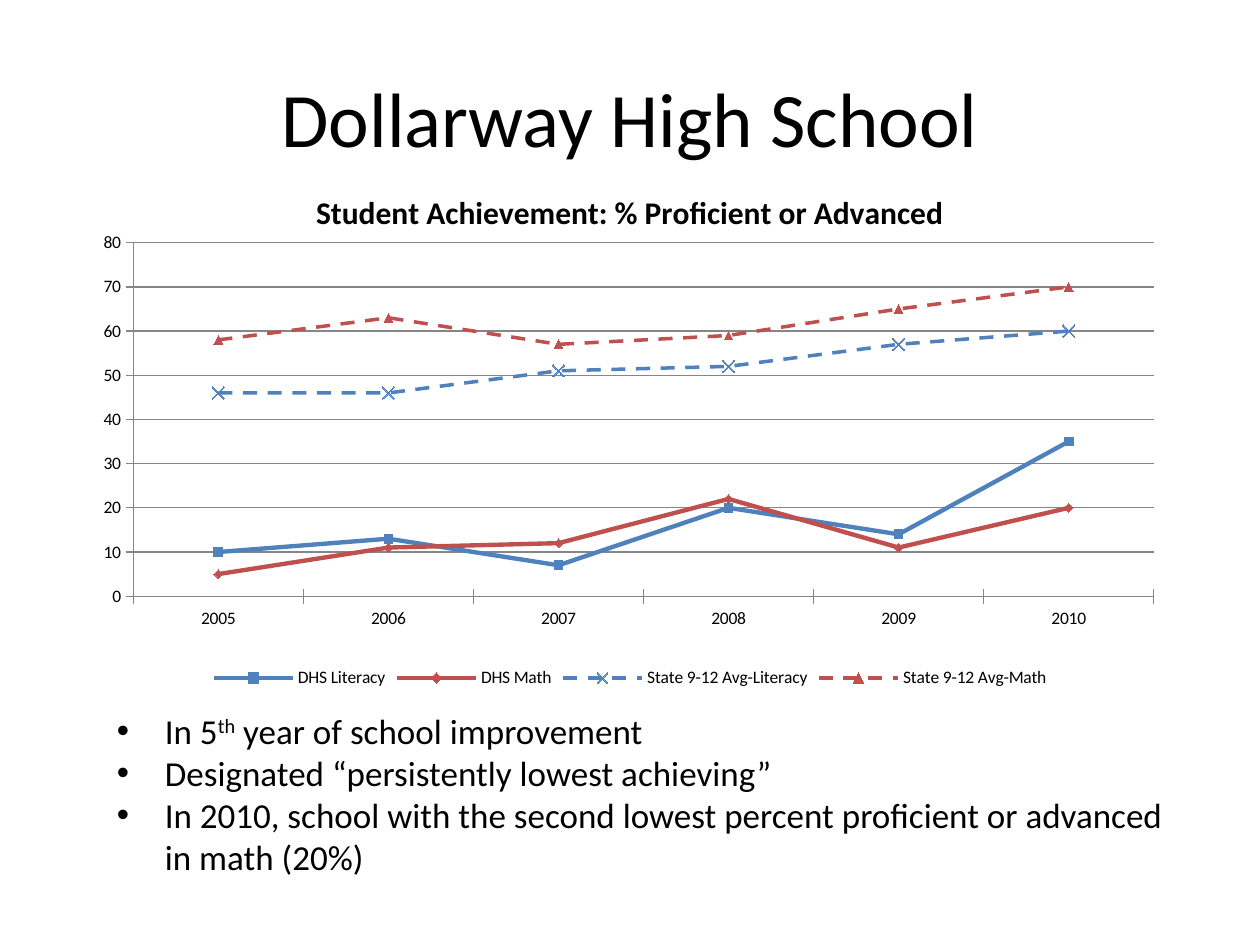
from lxml import etree
from pptx import Presentation
from pptx.chart.data import CategoryChartData
from pptx.dml.color import RGBColor
from pptx.enum.chart import XL_CHART_TYPE, XL_LEGEND_POSITION, XL_MARKER_STYLE, XL_TICK_MARK
from pptx.enum.dml import MSO_LINE
from pptx.enum.text import MSO_ANCHOR, PP_ALIGN
from pptx.oxml import parse_xml
from pptx.oxml.ns import nsdecls, qn
from pptx.util import Inches, Pt

BLACK = RGBColor(0x00, 0x00, 0x00)
GRAY = RGBColor(0x86, 0x86, 0x86)
BLUE = RGBColor(0x4F, 0x81, 0xBD)
RED = RGBColor(0xC0, 0x50, 0x4D)
SOLID, DASH = MSO_LINE.SOLID, MSO_LINE.DASH
SQUARE, DIAMOND = XL_MARKER_STYLE.SQUARE, XL_MARKER_STYLE.DIAMOND
CROSS_MARK, TRIANGLE = XL_MARKER_STYLE.X, XL_MARKER_STYLE.TRIANGLE
TICK_CROSS = XL_TICK_MARK.CROSS

YEARS = ["2005", "2006", "2007", "2008", "2009", "2010"]
# name, values, color, dash, line width, marker style, marker size
SERIES = [
    ("DHS Literacy", (10, 13, 7, 20, 14, 35), BLUE, SOLID, 2.5, SQUARE, 5),
    ("DHS Math", (5, 11, 12, 22, 11, 20), RED, SOLID, 2.5, DIAMOND, 5),
    ("State 9-12 Avg-Literacy", (46, 46, 51, 52, 57, 60), BLUE, DASH, 2, CROSS_MARK, 7),
    ("State 9-12 Avg-Math", (58, 63, 57, 59, 65, 70), RED, DASH, 2, TRIANGLE, 5),
]
# each bullet is a list of (text, is superscript)
BULLETS = [
    [("In 5", False), ("th", True), (" year of school improvement", False)],
    [("Designated “persistently lowest achieving”", False)],
    [("In 2010, school with the second lowest percent proficient or advanced "
      "in math (20%)", False)],
]


class SlideBuilder:
    font_name = "Calibri"

    def __init__(self, slide):
        self.slide = slide

    def style_font(self, font, size, bold=False):
        font.name = self.font_name
        font.size = Pt(size)
        font.bold = bold
        font.color.rgb = BLACK

    def title(self, text, left, top, width, height):
        shape = self.slide.shapes.title
        shape.left, shape.top, shape.width, shape.height = left, top, width, height
        frame = shape.text_frame
        frame.text = text
        frame.vertical_anchor = MSO_ANCHOR.MIDDLE
        paragraph = frame.paragraphs[0]
        paragraph.alignment = PP_ALIGN.CENTER
        self.style_font(paragraph.runs[0].font, 44)

    def line_chart(self, title, left, top, width, height):
        data = CategoryChartData()
        data.categories = YEARS
        for name, values, *_ in SERIES:
            data.add_series(name, values)
        chart = self.slide.shapes.add_chart(
            XL_CHART_TYPE.LINE_MARKERS, left, top, width, height, data).chart
        self.style_font(chart.font, 10)

        chart.has_title = True
        chart.chart_title.include_in_layout = False
        title_frame = chart.chart_title.text_frame
        title_frame.text = title
        self.style_font(title_frame.paragraphs[0].runs[0].font, 18, bold=True)

        chart.has_legend = True
        chart.legend.position = XL_LEGEND_POSITION.BOTTOM
        chart.legend.include_in_layout = False

        value_axis = chart.value_axis
        value_axis.minimum_scale, value_axis.maximum_scale = 0, 80
        value_axis.major_unit = 10
        value_axis.has_major_gridlines = True
        for axis in (chart.category_axis, value_axis):
            axis.major_tick_mark = TICK_CROSS
        for part in (chart.category_axis, value_axis, value_axis.major_gridlines):
            part.format.line.color.rgb = GRAY
            part.format.line.width = Pt(0.75)

        plot = chart.plots[0]
        plot.vary_by_categories = False
        for series, style in zip(plot.series, SERIES):
            self.style_series(series, *style[2:])
        self.place_plot(chart, x=0.062, y=0.143, w=0.9, h=0.673)

    def style_series(self, series, color, dash, width, marker_style, marker_size):
        series.smooth = False
        line = series.format.line
        line.color.rgb = color
        line.width = Pt(width)
        line.dash_style = dash
        marker = series.marker
        marker.style = marker_style
        marker.size = marker_size
        marker.format.fill.solid()
        marker.format.fill.fore_color.rgb = color
        marker.format.line.color.rgb = color

    def place_plot(self, chart, **fractions):
        """Fix the inner plot area, in fractions of the chart."""
        sizes = "".join(f'<c:{key} val="{value}"/>' for key, value in fractions.items())
        layout = parse_xml(
            f'<c:layout {nsdecls("c")}><c:manualLayout><c:layoutTarget val="inner"/>'
            f'<c:xMode val="edge"/><c:yMode val="edge"/>{sizes}'
            "</c:manualLayout></c:layout>")
        plot_area = chart.element.find(".//" + qn("c:plotArea"))
        for old_layout in plot_area.findall(qn("c:layout")):
            plot_area.remove(old_layout)
        plot_area.insert(0, layout)

    def bullet_list(self, bullets, left, top, width, height):
        frame = self.slide.shapes.add_textbox(left, top, width, height).text_frame
        frame.word_wrap = True
        for index, parts in enumerate(bullets):
            paragraph = frame.add_paragraph() if index else frame.paragraphs[0]
            for text, is_superscript in parts:
                run = paragraph.add_run()
                run.text = text
                self.style_font(run.font, 20)
                if is_superscript:
                    run.font._element.set("baseline", "30000")
            self.add_bullet(paragraph, Inches(0.38))

    def add_bullet(self, paragraph, indent):
        properties = paragraph._p.get_or_add_pPr()
        properties.set("marL", str(indent))
        properties.set("indent", str(-indent))
        etree.SubElement(properties, qn("a:buFont"), typeface="Arial")
        etree.SubElement(properties, qn("a:buChar"), char="•")


def main():
    presentation = Presentation()
    presentation.slide_width = Inches(10)
    presentation.slide_height = Inches(7.5)
    title_only = presentation.slide_layouts[5]
    builder = SlideBuilder(presentation.slides.add_slide(title_only))
    builder.title("Dollarway High School",
                  Inches(0.5), Inches(0.3), Inches(9), Inches(1.25))
    builder.line_chart("Student Achievement: % Proficient or Advanced",
                       Inches(0.5), Inches(1.33), Inches(9), Inches(4.17))
    builder.bullet_list(BULLETS, Inches(0.83), Inches(5.58), Inches(8.5), Inches(1.75))
    presentation.save("out.pptx")


if __name__ == "__main__":
    main()
